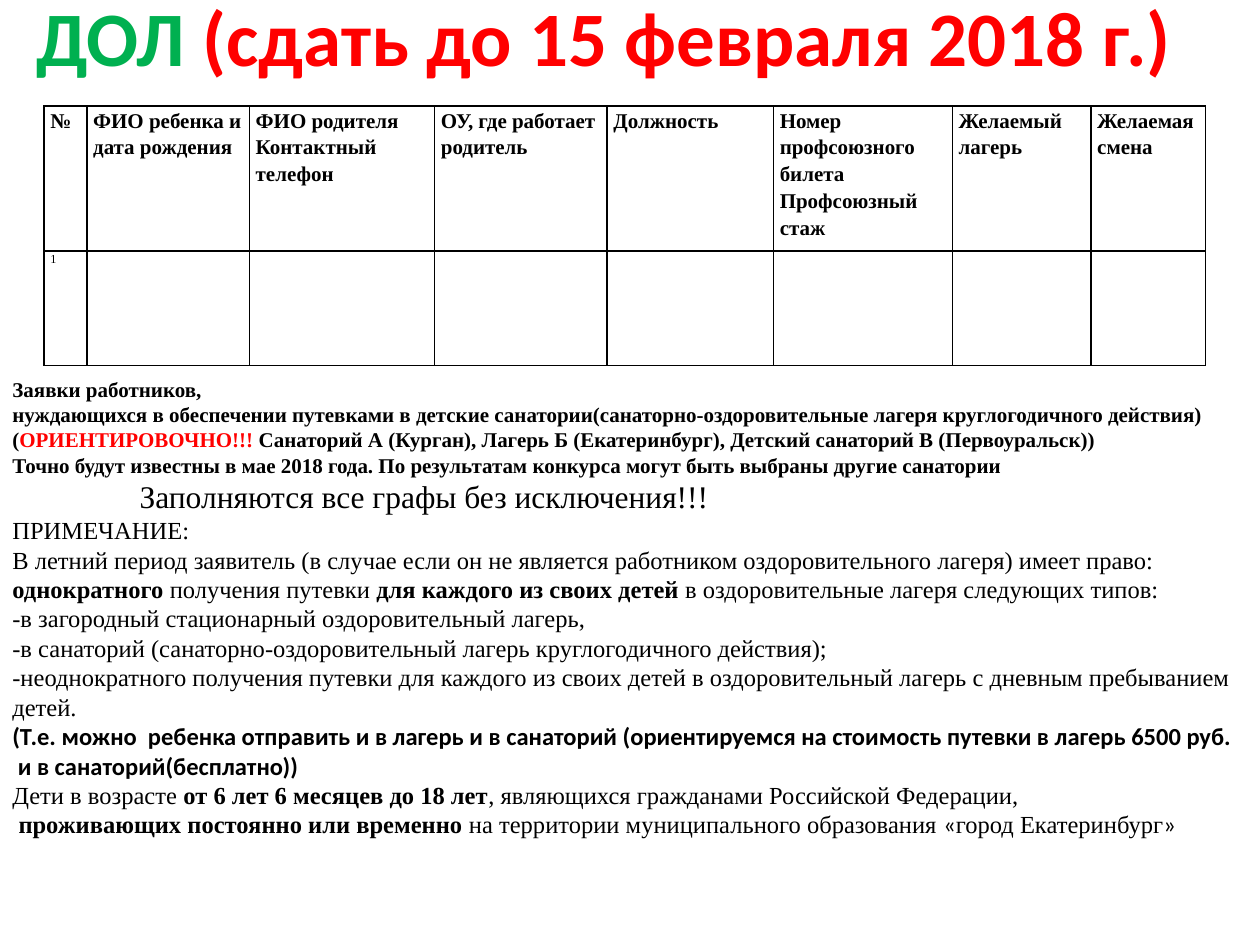
from lxml import etree
from pptx import Presentation
from pptx.dml.color import RGBColor
from pptx.enum import text
from pptx.oxml import ns
from pptx.util import Inches, Pt

SERIF, SANS = "Times New Roman", "Calibri"
BLACK, RED, GREEN = "000000", "FF0000", "00B050"

TITLE = [("ДОЛ ", {"color": GREEN}), ("(сдать до 15 февраля 2018 г.)", {"color": RED})]
COLUMNS = [
    (0.34, ["№"]),
    (1.29, ["ФИО ребенка и дата рождения"]),
    (1.47, ["ФИО родителя", "Контактный телефон"]),
    (1.37, ["ОУ, где работает родитель"]),
    (1.32, ["Должность"]),
    (1.42, ["Номер профсоюзного билета", "Профсоюзный стаж"]),
    (1.1, ["Желаемый лагерь"]),
    (0.91, ["Желаемая смена"]),
]
ROW_HEIGHTS = [1.06, 0.91]

BOLD = {"bold": True}
REQUEST = {"size": 12, "bold": True}
NOTE = {"size": 14}
STRESS = {"size": 14, "bold": True, "font": SANS}
BODY = [
    (REQUEST, ["Заявки работников,"]),
    (REQUEST, ["нуждающихся в обеспечении путевками в детские санатории"
               "(санаторно-оздоровительные лагеря круглогодичного действия)"]),
    (REQUEST, ["(", ("ОРИЕНТИРОВОЧНО!!! ", {"color": RED}),
               "Санаторий А (Курган), Лагерь Б (Екатеринбург), "
               "Детский санаторий В (Первоуральск))"]),
    (REQUEST, ["Точно будут известны в мае 2018 года. По результатам конкурса "
               "могут быть выбраны другие санатории"]),
    ({"size": 18}, [("\t", {"size": 11, "font": SANS}),
                    "Заполняются все графы без исключения!!!"]),
    (NOTE, ["ПРИМЕЧАНИЕ:"]),
    (NOTE, ["В летний период заявитель (в случае если он не является работником "
            "оздоровительного лагеря) имеет право:"]),
    (NOTE, [("однократного ", BOLD), "получения путевки ",
            ("для каждого из своих детей", BOLD),
            " в оздоровительные лагеря следующих типов:"]),
    (NOTE, ["-в загородный стационарный оздоровительный лагерь,"]),
    (NOTE, ["-в санаторий (санаторно-оздоровительный лагерь круглогодичного действия);"]),
    (NOTE, ["-неоднократного получения путевки для каждого из своих детей "
            "в оздоровительный лагерь с дневным пребыванием"]),
    (NOTE, ["детей."]),
    (STRESS, ["(Т.е. можно  ребенка отправить и в лагерь и в санаторий "
              "(ориентируемся на стоимость путевки в лагерь 6500 руб."]),
    (STRESS, [" и в санаторий(бесплатно))"]),
    (NOTE, ["Дети в возрасте ", ("от 6 лет 6 месяцев до 18 лет", BOLD),
            ", являющихся гражданами Российской Федерации,"]),
    (NOTE, [" ", ("проживающих постоянно или временно", BOLD),
            " на территории муниципального образования ", ("«", {"font": SANS}),
            "город Екатеринбург", ("»", {"font": SANS})]),
]


def rgb(value):
    return RGBColor.from_string(value)


def add_run(p, words, size, font=SERIF, color=BLACK, bold=False):
    r = p.add_run()
    r.text = words
    r.font.size, r.font.name, r.font.bold = Pt(size), font, bold
    r.font.color.rgb = rgb(color)


def fill_paragraph(p, style, pieces):
    for piece in pieces:
        words, extra = (piece, {}) if isinstance(piece, str) else piece
        add_run(p, words, **{**style, **extra})


def fill_text(tf, paragraphs):
    for i, (style, pieces) in enumerate(paragraphs):
        p = tf.add_paragraph() if i else tf.paragraphs[0]
        fill_paragraph(p, style, pieces)


def add_box(s, x, y, w, h, anchor):
    tf = s.shapes.add_textbox(Inches(x), Inches(y), Inches(w), Inches(h)).text_frame
    tf.word_wrap = True
    tf.vertical_anchor = anchor
    return tf


def add_tab(p, position):
    tabs = etree.SubElement(p._p.get_or_add_pPr(), ns.qn("a:tabLst"))
    etree.SubElement(tabs, ns.qn("a:tab"), pos=str(Inches(position)), algn="l")


def add_borders(cell):
    pr = cell._tc.get_or_add_tcPr()
    for i, side in enumerate(("lnL", "lnR", "lnT", "lnB")):
        ln = etree.Element(ns.qn("a:" + side), w=str(Pt(1)))
        fill = etree.SubElement(ln, ns.qn("a:solidFill"))
        etree.SubElement(fill, ns.qn("a:srgbClr"), val=BLACK)
        pr.insert(i, ln)


def add_form(s):
    widths = [w for w, _ in COLUMNS]
    table = s.shapes.add_table(len(ROW_HEIGHTS), len(COLUMNS), Inches(0.35), Inches(0.84),
                               Inches(sum(widths)), Inches(sum(ROW_HEIGHTS))).table
    table.first_row = table.horz_banding = False
    for row, height in zip(table.rows, ROW_HEIGHTS):
        row.height = Inches(height)
    for j, (width, lines) in enumerate(COLUMNS):
        table.columns[j].width = Inches(width)
        fill_text(table.cell(0, j).text_frame, [(REQUEST, [line]) for line in lines])
    fill_text(table.cell(1, 0).text_frame, [({"size": 7}, ["1"])])
    for cell in table.iter_cells():
        cell.margin_left = cell.margin_right = Inches(0.05)
        cell.margin_top = cell.margin_bottom = 0
        cell.fill.background()
        add_borders(cell)
        for p in cell.text_frame.paragraphs:
            p.line_spacing = 1.15


def main():
    prs = Presentation()
    prs.slide_width, prs.slide_height = Inches(10), Inches(7.5)
    s = prs.slides.add_slide(prs.slide_layouts[6])

    tf = add_box(s, 0, -0.34, 9.59, 1.25, text.MSO_ANCHOR.MIDDLE)
    fill_text(tf, [({"size": 44, "font": SANS, "bold": True}, TITLE)])
    tf.paragraphs[0].alignment = text.PP_ALIGN.CENTER

    add_form(s)

    tf = add_box(s, 0, 2.94, 10, 3.8, text.MSO_ANCHOR.TOP)
    tf.margin_right = 0
    fill_text(tf, BODY)
    for p in tf.paragraphs:
        add_tab(p, 1.01)

    prs.save("out.pptx")


if __name__ == "__main__":
    main()
